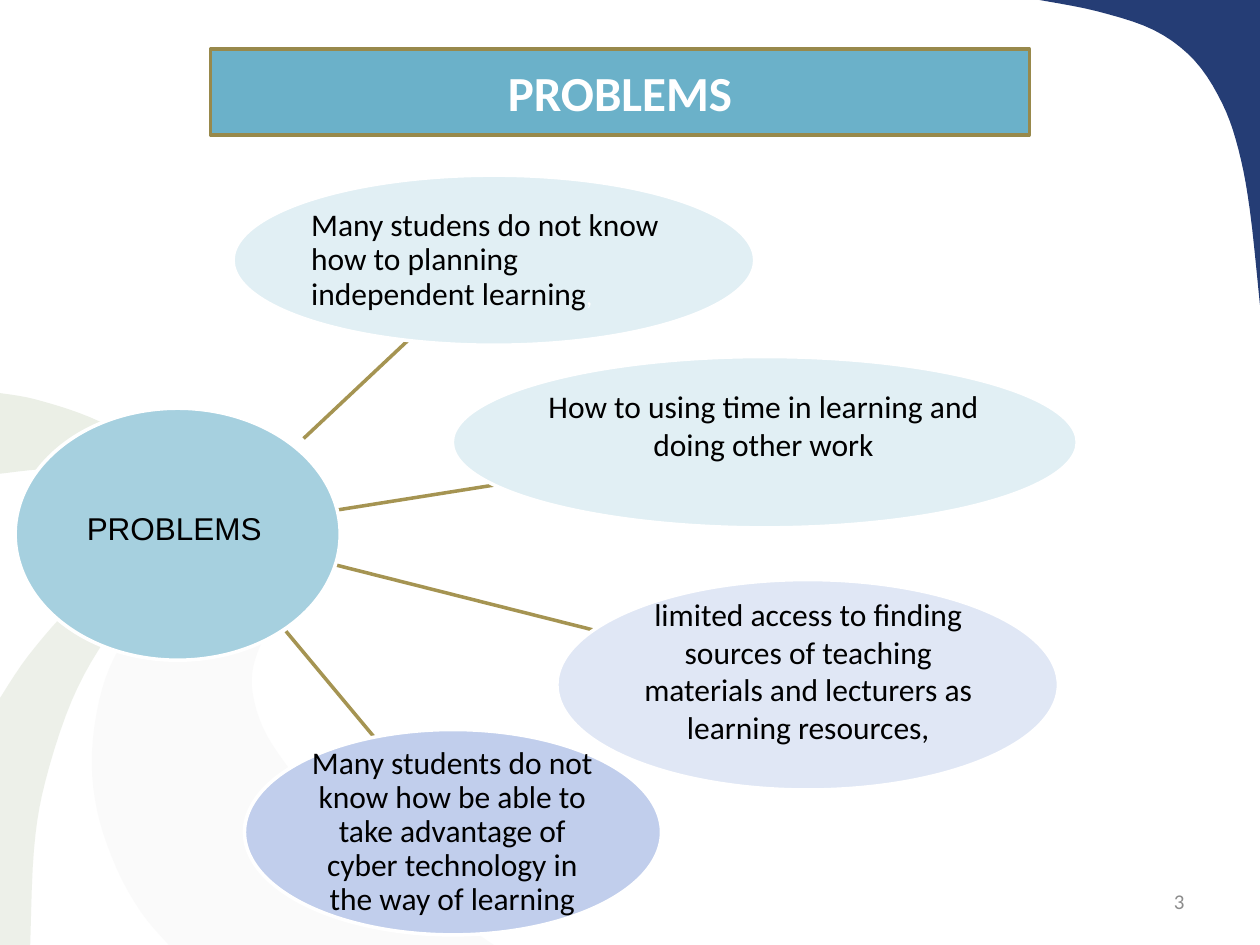
from lxml.etree import SubElement
from pptx import Presentation
from pptx.dml.color import RGBColor
from pptx.enum.shapes import MSO_CONNECTOR, MSO_SHAPE
from pptx.enum.text import MSO_ANCHOR, PP_ALIGN
from pptx.oxml.ns import qn
from pptx.util import Inches, Pt

WHITE = RGBColor(0xFF, 0xFF, 0xFF)
BLACK = RGBColor(0x00, 0x00, 0x00)
GRAY = RGBColor(0x8C, 0x8C, 0x8C)
NAVY = RGBColor(0x25, 0x3D, 0x75)
SAGE = RGBColor(0xEB, 0xEF, 0xE6)
DEEP_SAGE = RGBColor(0xD7, 0xDF, 0xCE)
PALE_GRAY = RGBColor(0xF2, 0xF2, 0xF2)
TEAL = RGBColor(0x6B, 0xB1, 0xC9)
HUB_BLUE = RGBColor(0xA6, 0xD0, 0xDF)
ICE = RGBColor(0xE1, 0xEF, 0xF4)
LAVENDER = RGBColor(0xE0, 0xE7, 0xF5)
PERIWINKLE = RGBColor(0xC1, 0xCE, 0xEC)
GOLD = RGBColor(0xA5, 0x94, 0x52)
DARK_GOLD = RGBColor(0x98, 0x89, 0x4B)

# Each swirl: colour, opacity in percent, smooth edges joined by straight lines
SWIRLS = [
    (NAVY, 100, [
        [(8.25, 0), (8.71, 0.09), (9.16, 0.24), (9.48, 0.48), (9.7, 0.82),
         (9.83, 1.19), (9.92, 1.67), (10, 2.42)],
        [(10, 0)]]),
    (SAGE, 100, [
        [(0, 3.12), (0.28, 3.17), (0.71, 3.31), (1.16, 3.54), (1.53, 3.81),
         (1.82, 4.09), (2.02, 4.35)],
        [(2.02, 4.35), (1.83, 4.18), (1.54, 4), (1.15, 3.83), (0.78, 3.74),
         (0.4, 3.72), (0, 3.76)]]),
    (DEEP_SAGE, 44, [
        [(0, 5.54), (0.22, 5.21), (0.55, 4.83), (0.85, 4.6), (1.18, 4.43), (1.55, 4.32)],
        [(1.55, 4.32), (1.2, 4.62), (0.84, 5.07), (0.57, 5.56), (0.36, 6.2),
         (0.27, 6.74), (0.24, 7.5)],
        [(0, 7.5)]]),
    (PALE_GRAY, 34, [
        [(2.45, 4.79), (2.15, 4.65), (1.83, 4.61), (1.51, 4.67), (1.22, 4.83),
         (0.98, 5.09), (0.81, 5.47), (0.73, 5.97), (0.77, 6.43), (0.92, 6.88),
         (1.12, 7.24), (1.34, 7.5)],
        [(3.92, 7.5), (3.47, 7.19), (3.04, 6.85), (2.59, 6.45), (2.31, 6.12),
         (2.09, 5.78), (2, 5.45), (2.04, 5.19), (2.16, 5), (2.45, 4.79)]]),
]
SPOKES = [((2.27, 5.01), (2.97, 5.85)), ((2.41, 4.42), (4.71, 5)),
          ((2.41, 4.09), (3.92, 3.85)), ((2.41, 3.48), (3.24, 2.7))]
HUB = (0.12, 3.24, 2.58, 2)
# Each problem: ellipse, colour, text box, inset, alignment, line spacing, text
PROBLEMS = [
    ((1.85, 1.39, 4.14, 1.35), ICE, (2.46, 1.59, 2.93, 0.96), 0.01, PP_ALIGN.LEFT, 0.9,
     "Many studens do not know how to planning independent learning"),
    ((3.59, 2.83, 4.96, 1.36), ICE, (4.31, 2.89, 3.5, 0.96), 0.01, PP_ALIGN.CENTER, 1,
     "How to using time in learning and doing other work"),
    ((4.42, 4.6, 3.98, 1.67), LAVENDER, (5.01, 4.73, 2.81, 1.18), 0.03, PP_ALIGN.CENTER, 1,
     "limited access to finding sources of teaching materials and lecturers "
     "as learning resources,"),
    ((1.94, 5.79, 3.31, 1.63), PERIWINKLE, (2.42, 6.03, 2.34, 1.15), 0.03, PP_ALIGN.CENTER, 0.9,
     "Many students do not know how be able to take advantage of cyber "
     "technology in the way of learning"),
]


def inches(values):
    return [Inches(value) for value in values]


def smooth(points, steps=5):
    """Sample a Catmull-Rom curve that passes through the points."""
    padded = [points[0], *points, points[-1]]
    curve = [points[0]]
    for a, b, c, d in zip(padded, padded[1:], padded[2:], padded[3:]):
        for step in range(1, steps + 1):
            t = step / steps
            curve.append(tuple(
                (2 * q + (r - p) * t + (2 * p - 5 * q + 4 * r - s) * t ** 2
                 + (3 * q - p - 3 * r + s) * t ** 3) / 2
                for p, q, r, s in zip(a, b, c, d)))
    return curve


def add_swirl(shapes, color, opacity, edges):
    outline = [inches(point) for edge in edges for point in smooth(edge)]
    builder = shapes.build_freeform(*outline[0])
    builder.add_line_segments(outline[1:], close=True)
    swirl = builder.convert_to_shape()
    swirl.shadow.inherit = False
    swirl.fill.solid()
    swirl.fill.fore_color.rgb = color
    swirl.line.fill.background()
    if opacity < 100:
        color_element = swirl.fill._xPr.find(qn("a:solidFill"))[0]
        SubElement(color_element, qn("a:alpha"), val=str(opacity * 1000))


def add_spoke(shapes, start, end):
    spoke = shapes.add_connector(MSO_CONNECTOR.STRAIGHT, *inches(start + end))
    spoke.line.color.rgb = GOLD
    spoke.line.width = Pt(2)
    SubElement(spoke._element.spPr, qn("a:effectLst"))


def paint(shape, fill, line):
    shape.fill.solid()
    shape.fill.fore_color.rgb = fill
    shape.line.color.rgb = line
    shape.line.width = Pt(2)


def add_ellipse(shapes, place, color):
    ellipse = shapes.add_shape(MSO_SHAPE.OVAL, *inches(place))
    ellipse.shadow.inherit = False
    paint(ellipse, color, WHITE)


def set_font(font, size, color, name="Calibri"):
    font.name = name
    font.size = Pt(size)
    font.color.rgb = color


def add_text(shapes, place, text, size=18, color=BLACK, name="Calibri",
             align=PP_ALIGN.LEFT, inset=None, spacing=1):
    frame = shapes.add_textbox(*inches(place)).text_frame
    frame.word_wrap = True
    frame.vertical_anchor = MSO_ANCHOR.MIDDLE
    if inset is not None:
        frame.margin_left = frame.margin_right = Inches(inset)
        frame.margin_top = frame.margin_bottom = Inches(inset)
    para = frame.paragraphs[0]
    para.text = text
    para.alignment = align
    para.line_spacing = spacing
    set_font(para.font, size, color, name)
    return para


def main():
    deck = Presentation()
    deck.slide_width, deck.slide_height = Inches(10), Inches(7.5)
    page = deck.slides.add_slide(deck.slide_layouts[5])
    shapes = page.shapes

    title = shapes.title
    title.left, title.top, title.width, title.height = inches((1.67, 0.39, 6.5, 0.68))
    paint(title, TEAL, DARK_GOLD)
    title.text_frame.text = "PROBLEMS"
    title.text_frame.vertical_anchor = MSO_ANCHOR.MIDDLE
    heading = title.text_frame.paragraphs[0]
    heading.alignment = PP_ALIGN.CENTER
    set_font(heading.font, 28, WHITE)
    heading.font.bold = True

    for swirl in SWIRLS:
        add_swirl(shapes, *swirl)
    for start, end in SPOKES:
        add_spoke(shapes, start, end)
    add_ellipse(shapes, HUB, HUB_BLUE)
    for index, (oval, color, place, inset, align, spacing, text) in enumerate(PROBLEMS):
        add_ellipse(shapes, oval, color)
        para = add_text(shapes, place, text, align=align, inset=inset, spacing=spacing)
        if index == 0:
            comma = para.add_run()
            comma.text = ","
            set_font(comma.font, 14, WHITE)
    add_text(shapes, (7.17, 6.95, 2.33, 0.4), "3", 12, GRAY, align=PP_ALIGN.RIGHT)
    add_text(shapes, (0.59, 3.99, 1.72, 0.4), "PROBLEMS", name="Arial")

    deck.save("out.pptx")


if __name__ == "__main__":
    main()
